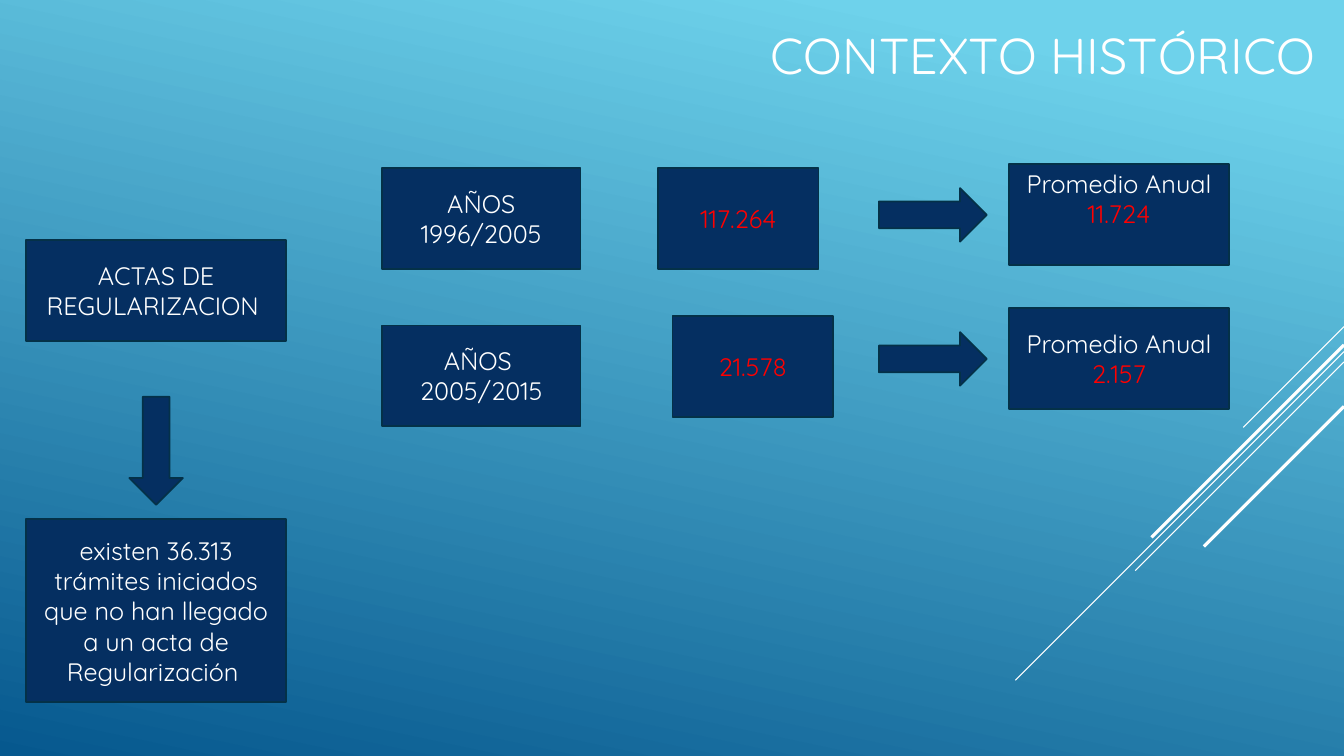
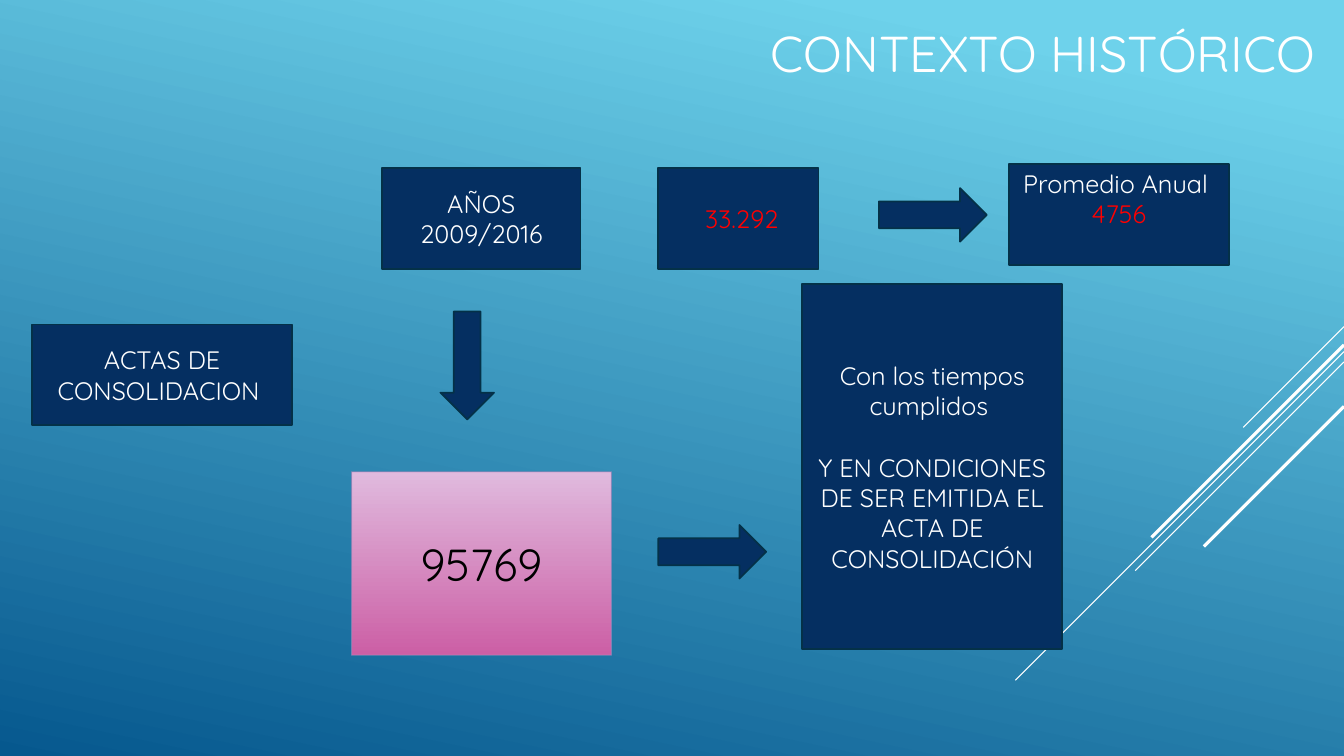
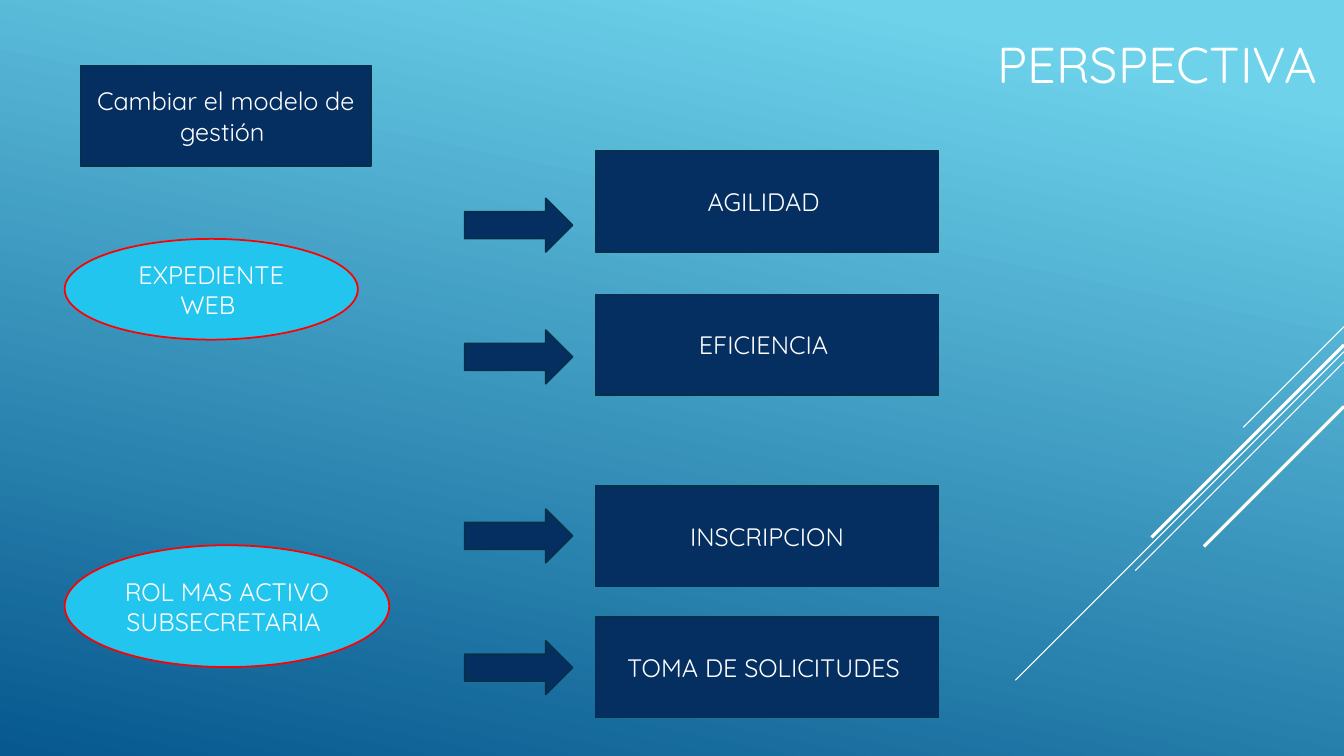
import pptx
import pptx.util
import pptx.dml.color
import pptx.enum.shapes
import pptx.enum.text
import pptx.oxml.ns
from lxml import etree

Cm, Pt = pptx.util.Cm, pptx.util.Pt
RGBColor = pptx.dml.color.RGBColor
Shape = pptx.enum.shapes.MSO_SHAPE
Align = pptx.enum.text.PP_ALIGN
Anchor = pptx.enum.text.MSO_ANCHOR
qn = pptx.oxml.ns.qn

# Shared style
FONT = "Quicksand"
WHITE = RGBColor(0xFF, 0xFF, 0xFF)
BLACK = RGBColor(0x00, 0x00, 0x00)
RED = RGBColor(0xFF, 0x00, 0x00)
NAVY = RGBColor(0x05, 0x2F, 0x61)
NAVY_EDGE = RGBColor(0x04, 0x31, 0x48)
CYAN = RGBColor(0x22, 0xC5, 0xED)
SKY = RGBColor(0x6E, 0xD2, 0xEB)
DEEP_BLUE = RGBColor(0x06, 0x58, 0x8E)
PINK_LIGHT = RGBColor(0xE0, 0xBA, 0xDE)
PINK_DARK = RGBColor(0xCC, 0x5F, 0xA5)
PINK_EDGE = RGBColor(0xC0, 0x89, 0xBD)

# Sizes in centimetres
SLIDE_WIDTH, SLIDE_HEIGHT = 33.87, 19.05
BOX_HEIGHT = 2.54
SUBJECT_WIDTH = 6.55
TALL_BOX_HEIGHT = 4.62
ARROW_LENGTH, ARROW_BREADTH = 2.72, 1.35
# Diagonals at 45 degrees from the right edge: start height, run, weight
DIAGONALS = [
    (8.23, 2.54, 0.75),
    (8.86, 8.28, 0.75),
    (9.12, 5.26, 0.75),
    (8.69, 4.85, 2.25),
    (10.24, 3.53, 2.25),
]


def write_text(shape, paragraphs, *, size=18, color=WHITE, align=Align.CENTER,
               anchor=Anchor.MIDDLE, margin_top=None, gap=0):
    """Each paragraph is a string or a list of (text, color) runs."""
    frame = shape.text_frame
    frame.word_wrap = True
    frame.vertical_anchor = anchor
    if margin_top is not None:
        frame.margin_top = Cm(margin_top)
    for index, content in enumerate(paragraphs):
        paragraph = frame.add_paragraph() if index else frame.paragraphs[0]
        paragraph.alignment = align
        if index and gap:
            paragraph.space_before = Pt(gap)
        runs = [(content, color)] if isinstance(content, str) else content
        for text, run_color in runs:
            run = paragraph.add_run()
            run.text = text
            run.font.name = FONT
            run.font.size = Pt(size)
            run.font.color.rgb = run_color


def fill_gradient(fill, first, last, *, start=0, angle=90):
    fill.gradient()
    fill.gradient_angle = 360 - angle
    for stop, color, position in zip(fill.gradient_stops, (first, last), (start, 1)):
        stop.color.rgb = color
        stop.position = position


def add_node(slide, left, top, width, height=BOX_HEIGHT, paragraphs=(), *,
             kind=Shape.RECTANGLE, fill=NAVY, edge=NAVY_EDGE, weight=1.25, **text_format):
    shape = slide.shapes.add_shape(kind, Cm(left), Cm(top), Cm(width), Cm(height))
    shape.shadow.inherit = False
    shape.fill.solid()
    shape.fill.fore_color.rgb = fill
    shape.line.color.rgb = edge
    shape.line.width = Pt(weight)
    if paragraphs:
        write_text(shape, paragraphs, **text_format)
    return shape


def add_right_arrow(slide, left, top):
    add_node(slide, left, top, ARROW_LENGTH, ARROW_BREADTH, kind=Shape.RIGHT_ARROW)


def add_down_arrow(slide, left, top):
    add_node(slide, left, top, ARROW_BREADTH, ARROW_LENGTH, kind=Shape.DOWN_ARROW)


def add_diagonals(slide):
    for top, run, weight in DIAGONALS:
        line = slide.shapes.add_connector(
            pptx.enum.shapes.MSO_CONNECTOR.STRAIGHT,
            Cm(SLIDE_WIDTH), Cm(top), Cm(SLIDE_WIDTH - run), Cm(top + run))
        line.line.color.rgb = WHITE
        line.line.width = Pt(weight)
        etree.SubElement(line._element.spPr, qn("a:effectLst"))


def add_title(slide, text, left, top, width):
    box = slide.shapes.add_textbox(Cm(left), Cm(top), Cm(width), Cm(4.19))
    write_text(box, [text], size=36, align=Align.LEFT, anchor=Anchor.TOP, margin_top=0.55)


def start_slide(presentation, title, left, top, width):
    slide = presentation.slides.add_slide(presentation.slide_layouts[6])
    add_diagonals(slide)
    add_title(slide, title, left, top, width)
    return slide


def add_period_row(slide, left, top, period, count, average, *, period_drop=0.1,
                   count_drop=0.1, count_shift=0, **average_format):
    """Period, total, arrow and yearly average from left to right."""
    add_node(slide, left, top + period_drop, 5, paragraphs=period)
    add_node(slide, left + 6.96 + count_shift, top + count_drop, 4.04,
             paragraphs=[count], color=RED)
    add_right_arrow(slide, left + 12.52, top + 0.6)
    add_node(slide, left + 15.8, top, 5.54, paragraphs=average, **average_format)


def add_subject_column(slide, left, top, subject, note):
    """Subject box with an arrow down to its note."""
    add_node(slide, left, top, SUBJECT_WIDTH, paragraphs=[subject])
    add_down_arrow(slide, left + (SUBJECT_WIDTH - ARROW_BREADTH) / 2, top + 3.95)
    add_node(slide, left, top + 7.03, SUBJECT_WIDTH, TALL_BOX_HEIGHT, [note])


def add_pending_files(slide, left, top, count, conditions):
    """Pink total below an arrow, leading to the conditions on the right."""
    total = add_node(slide, left, top + 4.73, SUBJECT_WIDTH, TALL_BOX_HEIGHT, [count],
                     edge=PINK_EDGE, weight=0.75, size=32, color=BLACK)
    fill_gradient(total.fill, PINK_LIGHT, PINK_DARK)
    edge_color = total.line._ln.find(".//" + qn("a:srgbClr"))
    etree.SubElement(edge_color, qn("a:alpha"), val="60000")
    add_down_arrow(slide, left + 2.24, top + 0.69)
    add_right_arrow(slide, left + 7.73, top + 6.07)
    add_node(slide, left + 11.36, top, SUBJECT_WIDTH, 9.2, conditions, gap=22.5)


def add_goal_group(slide, left, top, goal, results, *, width, height, goal_drop,
                   arrow_drop, result_pitch):
    """Goal ellipse with an arrow and a box for each result."""
    add_node(slide, left, top + goal_drop, width, height, [goal],
             kind=Shape.OVAL, fill=CYAN, edge=RED)
    for index, result in enumerate(results):
        add_right_arrow(slide, left + 10.08, top + arrow_drop + index * 3.32)
        add_node(slide, left + 13.38, top + index * result_pitch, 8.64, paragraphs=[result])


def build_regularization(presentation):
    slide = start_slide(presentation, "CONTEXTO HISTÓRICO", 19.18, 0.05, 14.27)
    add_subject_column(
        slide, 0.66, 6.05, "ACTAS DE REGULARIZACION ",
        "existen 36.313 trámites iniciados que no han llegado a un acta de Regularización ")
    add_period_row(slide, 9.63, 4.14, ["AÑOS", "1996/2005"], "117.264",
                   [[("Promedio Anual ", WHITE), ("11.724", RED)]],
                   anchor=Anchor.TOP, margin_top=0.1)
    add_period_row(slide, 9.63, 7.77, ["AÑOS ", "2005/2015"], "21.578",
                   [[("Promedio Anual ", WHITE), ("2.157", RED)]],
                   period_drop=0.43, count_drop=0.2, count_shift=0.36)


def build_consolidation(presentation):
    slide = start_slide(presentation, "CONTEXTO HISTÓRICO", 19.18, 0, 14.27)
    add_node(slide, 0.81, 8.18, SUBJECT_WIDTH, paragraphs=["ACTAS DE CONSOLIDACION "])
    add_period_row(slide, 9.63, 4.14, ["AÑOS", "2009/2016"], " 33.292",
                   ["Promedio Anual ", [("4756", RED)]],
                   anchor=Anchor.TOP, margin_top=0.1)
    add_pending_files(slide, 8.86, 7.16, "95769", [
        "Con los tiempos cumplidos ",
        "Y EN CONDICIONES DE SER EMITIDA EL ACTA DE CONSOLIDACIÓN"])


def build_outlook(presentation):
    slide = start_slide(presentation, "PERSPECTIVA", 24.89, 0.28, 8.98)
    add_node(slide, 2.03, 1.65, 7.32, paragraphs=["Cambiar el modelo de gestión "])
    add_goal_group(slide, 1.63, 3.81, "EXPEDIENTE WEB ", ["AGILIDAD ", "EFICIENCIA "],
                   width=7.39, height=BOX_HEIGHT, goal_drop=2.21,
                   arrow_drop=1.19, result_pitch=3.61)
    add_goal_group(slide, 1.63, 12.24, "ROL MAS ACTIVO SUBSECRETARIA ",
                   ["INSCRIPCION", "TOMA DE SOLICITUDES "],
                   width=8.18, height=3.07, goal_drop=1.5,
                   arrow_drop=0.59, result_pitch=3.3)


def main():
    presentation = pptx.Presentation()
    presentation.slide_width = Cm(SLIDE_WIDTH)
    presentation.slide_height = Cm(SLIDE_HEIGHT)
    fill_gradient(presentation.slide_master.background.fill, SKY, DEEP_BLUE,
                  start=0.1, angle=102)
    build_regularization(presentation)
    build_consolidation(presentation)
    build_outlook(presentation)
    presentation.save("out.pptx")


if __name__ == "__main__":
    main()
